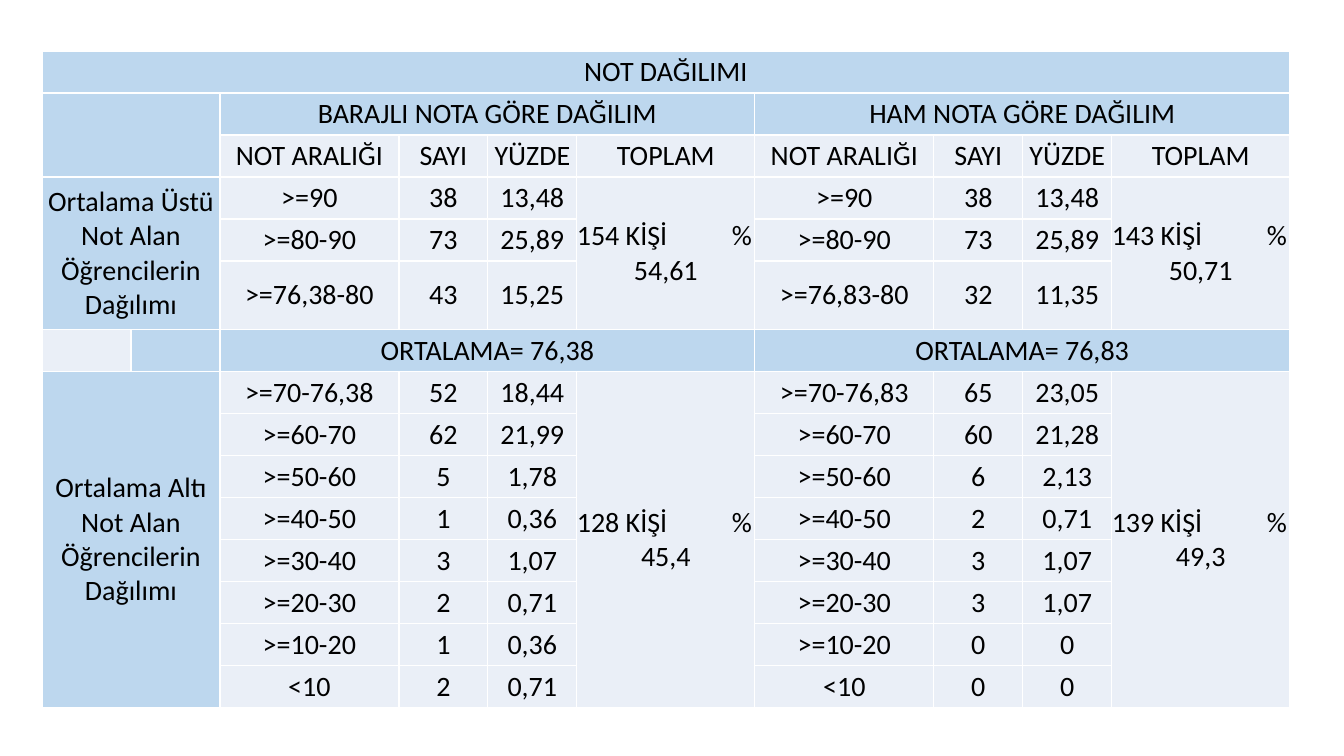
from lxml.etree import SubElement
from pptx import Presentation
from pptx.dml.color import RGBColor
from pptx.enum.text import MSO_ANCHOR, PP_ALIGN
from pptx.oxml.ns import qn
from pptx.util import Pt

PX = 914400 / 100.8
COLORS = {"heading": "BDD7EE", "body": "EAEFF7", "border": "FFFFFF", "text": "000000"}
FONT = {"name": "Calibri", "size": Pt(20), "bold": False}
CELL = {"margin_left": 0, "margin_right": 0, "margin_top": 0, "margin_bottom": 0,
        "vertical_anchor": MSO_ANCHOR.MIDDLE}
BANDING = {"first_row": False, "horz_banding": False}

GRID_BOX = (42, 51, 1248, 657)
LABEL_WIDTHS = [89, 89]
GROUP_WIDTHS = [179, 89, 89, 178]
ROW_HEIGHTS = [42] * 5 + [69] + [42] * 9
PERCENT_TAB = 155

COLUMN_TITLES = ["NOT ARALIĞI", "SAYI", "YÜZDE", "TOPLAM"]
MEAN_ROW = 6
# First row, row count and label of each half of the class
HALVES = [
    (3, 3, "Ortalama Üstü Not Alan Öğrencilerin Dağılımı"),
    (7, 8, "Ortalama Altı Not Alan Öğrencilerin Dağılımı"),
]
GROUPS = [
    {
        "title": "BARAJLI NOTA GÖRE DAĞILIM",
        "mean": "76,38",
        "totals": [("154 KİŞİ", "54,61"), ("128 KİŞİ", "45,4")],
        "counts": [[38, 73, 43], [52, 62, 5, 1, 3, 2, 1, 2]],
        "percents": [["13,48", "25,89", "15,25"],
                     ["18,44", "21,99", "1,78", "0,36", "1,07", "0,71", "0,36", "0,71"]],
    },
    {
        "title": "HAM NOTA GÖRE DAĞILIM",
        "mean": "76,83",
        "totals": [("143 KİŞİ", "50,71"), ("139 KİŞİ", "49,3")],
        "counts": [[38, 73, 32], [65, 60, 6, 2, 3, 3, 0, 0]],
        "percents": [["13,48", "25,89", "11,35"],
                     ["23,05", "21,28", "2,13", "0,71", "1,07", "1,07", "0", "0"]],
    },
]


def px(length):
    return round(length * PX)


def assign(target, values):
    for name, value in values.items():
        setattr(target, name, value)


def style_cell(cell):
    assign(cell, CELL)
    properties = cell._tc.get_or_add_tcPr()
    for side in ("lnL", "lnR", "lnT", "lnB"):
        line = SubElement(properties, qn(f"a:{side}"), w=str(Pt(1)))
        fill = SubElement(line, qn("a:solidFill"))
        SubElement(fill, qn("a:srgbClr"), val=COLORS["border"])
    paint(cell, "body")


def paint(cell, color):
    cell.fill.solid()
    cell.fill.fore_color.rgb = RGBColor.from_string(COLORS[color])


def write(para, text, align=PP_ALIGN.CENTER):
    para.alignment = align
    span = para.add_run()
    span.text = text
    assign(span.font, FONT)
    span.font.color.rgb = RGBColor.from_string(COLORS["text"])


def put(table, row, column, text, size=(1, 1), color="body"):
    """Write and paint a cell that spans size = (rows, columns)."""
    cell = table.cell(row, column)
    rows, columns = size
    if size != (1, 1):
        cell.merge(table.cell(row + rows - 1, column + columns - 1))
    paint(cell, color)
    if text:
        write(cell.text_frame.paragraphs[0], text)


def put_total(table, row, column, rows, people, percent):
    """Set the percent sign at a tab stop and its value on the next line."""
    put(table, row, column, "", (rows, 1))
    frame = table.cell(row, column).text_frame
    first = frame.paragraphs[0]
    write(first, f"{people}\t%", PP_ALIGN.LEFT)
    tabs = SubElement(first._p.get_or_add_pPr(), qn("a:tabLst"))
    SubElement(tabs, qn("a:tab"), pos=str(px(PERCENT_TAB)), algn="l")
    write(frame.add_paragraph(), percent)


def grade_ranges(mean):
    above = [">=90", ">=80-90", f">={mean}-80"]
    tens = [f">={low}-{low + 10}" for low in range(60, 0, -10)]
    return [above, [f">=70-{mean}", *tens, "<10"]]


def fill_group(table, column, group):
    put(table, 1, column, group["title"], (1, 4), "heading")
    for offset, title in enumerate(COLUMN_TITLES):
        put(table, 2, column + offset, title)
    put(table, MEAN_ROW, column, f"ORTALAMA= {group['mean']}", (1, 4), "heading")
    halves = zip(HALVES, grade_ranges(group["mean"]), group["counts"],
                 group["percents"], group["totals"])
    for (start, rows, _), ranges, counts, percents, total in halves:
        for row, values in enumerate(zip(ranges, counts, percents), start):
            for offset, value in enumerate(values):
                put(table, row, column + offset, str(value))
        put_total(table, start, column + 3, rows, *total)


def fill_labels(table):
    put(table, 1, 0, "", (2, 2), "heading")
    put(table, MEAN_ROW, 1, "", color="heading")
    for start, rows, label in HALVES:
        put(table, start, 0, label, (rows, 2), "heading")


def grade_table(page, box):
    widths = LABEL_WIDTHS + GROUP_WIDTHS * len(GROUPS)
    frame = page.shapes.add_table(len(ROW_HEIGHTS), len(widths), *map(px, box))
    table = frame.table
    assign(table, BANDING)
    for column, width in zip(table.columns, widths):
        column.width = px(width)
    for row, height in zip(table.rows, ROW_HEIGHTS):
        row.height = px(height)
    for cell in table.iter_cells():
        style_cell(cell)
    put(table, 0, 0, "NOT DAĞILIMI", (1, len(widths)), "heading")
    fill_labels(table)
    for index, group in enumerate(GROUPS):
        fill_group(table, len(LABEL_WIDTHS) + index * len(GROUP_WIDTHS), group)


def main():
    deck = Presentation()
    assign(deck, {"slide_width": px(1344), "slide_height": px(756)})
    page = deck.slides.add_slide(deck.slide_layouts[6])
    grade_table(page, GRID_BOX)
    deck.save("out.pptx")


if __name__ == "__main__":
    main()
